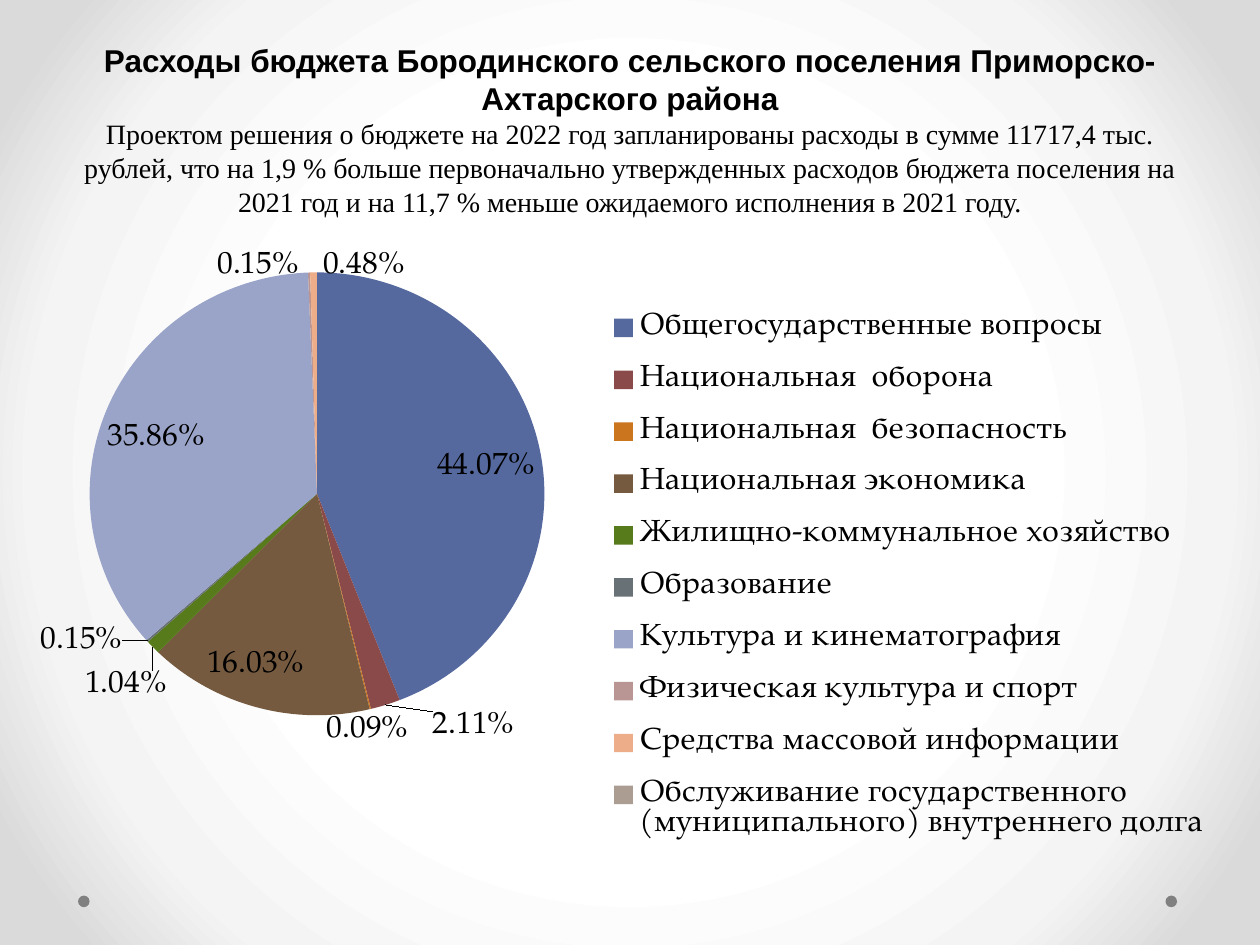
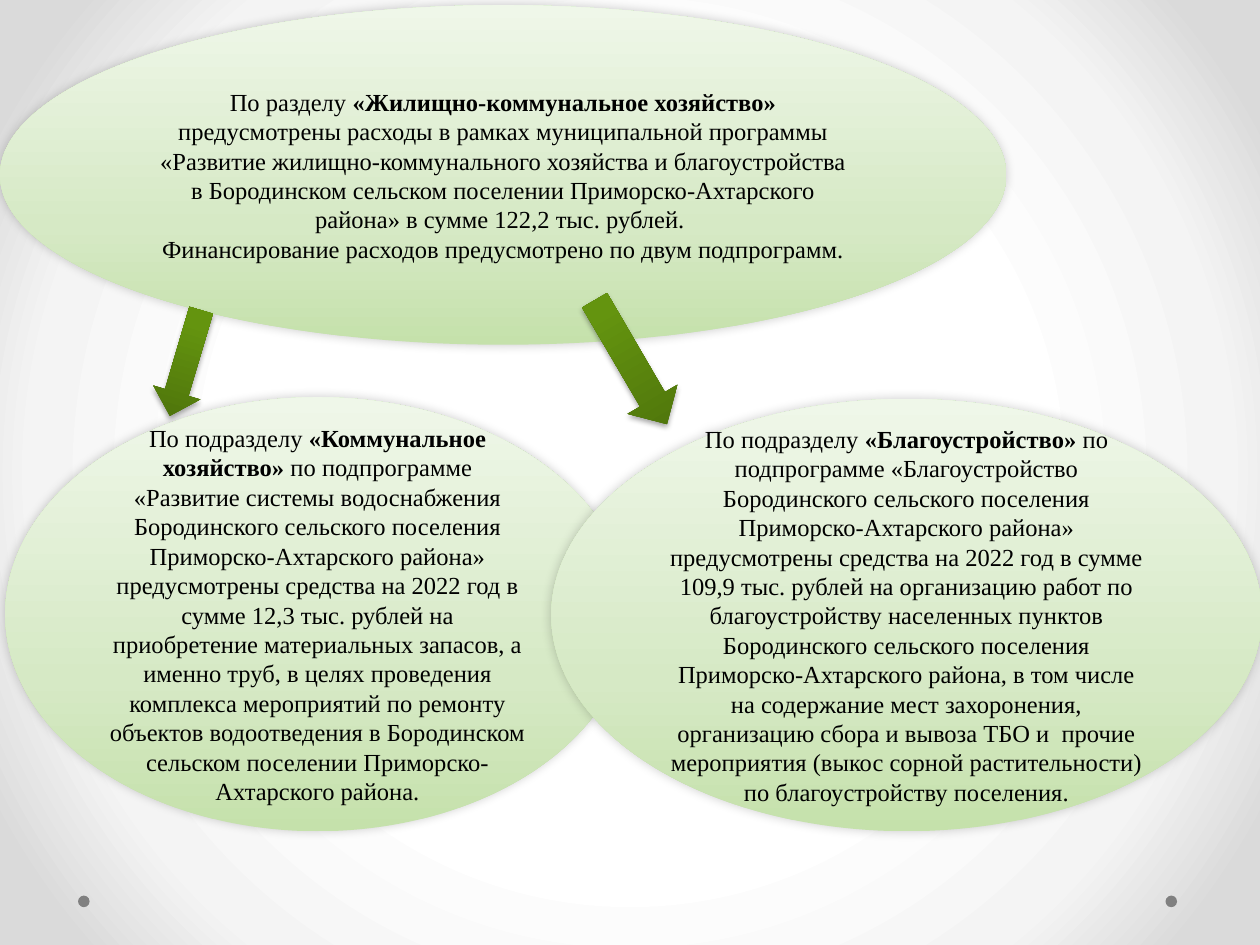
import pptx
import pptx.chart.data
import pptx.dml.color
import pptx.enum.chart
import pptx.enum.shapes
import pptx.enum.text
import pptx.oxml
import pptx.oxml.ns
import pptx.util

Pt = pptx.util.Pt
RGB = pptx.dml.color.RGBColor
SHAPE = pptx.enum.shapes.MSO_SHAPE
CENTER = pptx.enum.text.PP_ALIGN.CENTER

BLACK = RGB(0, 0, 0)
DOT_GRAY = RGB(0x80, 0x80, 0x80)
SERIF, SANS, CHART_FONT = "Times New Roman", "Arial", "TeX Gyre Pagella"

# Gradient stops: percent, colour
BACKDROP = [(50, RGB(0xFF, 0xFF, 0xFF)), (76, RGB(0xF4, 0xF4, 0xF4)), (92, RGB(0xDA, 0xDA, 0xDA))]
PALE_GREEN = [(0, RGB(0xC5, 0xE1, 0xAB)), (35, RGB(0xD6, 0xE9, 0xC5)), (100, RGB(0xEF, 0xF7, 0xE9))]
DEEP_GREEN = [(0, RGB(0x4D, 0x72, 0x0B)), (80, RGB(0x64, 0x94, 0x0F)), (100, RGB(0x65, 0x97, 0x0C))]
# Shadows: opacity percent, blur, distance, angle
SOFT_SHADOW = (20, 6, 0, 225)
ARROW_SHADOW = (35, 3.1, 1.8, 90)

HEADING = "Расходы бюджета Бородинского сельского поселения Приморско-Ахтарского района"
SUMMARY = (
    "Проектом решения о бюджете на 2022 год запланированы расходы в сумме 11717,4 тыс. рублей, "
    "что на 1,9 % больше первоначально утвержденных расходов бюджета поселения на 2021 год "
    "и на 11,7 % меньше ожидаемого исполнения в 2021 году."
)
EXPENSES = [
    ("Общегосударственные вопросы", 44.07, RGB(0x55, 0x69, 0x9F)),
    ("Национальная  оборона", 2.11, RGB(0x8A, 0x4A, 0x49)),
    ("Национальная  безопасность", 0.09, RGB(0xCC, 0x75, 0x1F)),
    ("Национальная экономика", 16.03, RGB(0x75, 0x5A, 0x3F)),
    ("Жилищно-коммунальное хозяйство", 1.04, RGB(0x57, 0x7A, 0x1B)),
    ("Образование", 0.15, RGB(0x68, 0x72, 0x76)),
    ("Культура и кинематография", 35.86, RGB(0x9A, 0xA4, 0xC9)),
    ("Физическая культура и спорт", 0.15, RGB(0xB9, 0x95, 0x94)),
    ("Средства массовой информации", 0.48, RGB(0xEE, 0xAD, 0x89)),
    ("Обслуживание государственного (муниципального) внутреннего долга", 0, RGB(0xAC, 0x9D, 0x92)),
]

# Each section: box, then paragraphs of (text, bold) runs
SECTIONS = [
    ((0, 3, 575, 194), [
        [("По разделу ", False),
         ("«Жилищно-коммунальное хозяйство» ", True),
         ("предусмотрены расходы в рамках муниципальной программы «Развитие "
          "жилищно-коммунального хозяйства и благоустройства в Бородинском сельском поселении "
          "Приморско-Ахтарского района» в сумме 122,2 тыс. рублей. ", False)],
        [("Финансирование расходов предусмотрено по двум подпрограмм.", False)],
    ]),
    ((3, 227, 357, 248), [
        [("По подразделу ", False),
         ("«Коммунальное хозяйство»", True),
         (" по подпрограмме «Развитие системы водоснабжения Бородинского сельского поселения "
          "Приморско-Ахтарского района» предусмотрены средства на 2022 год в сумме 12,3 тыс. "
          "рублей на приобретение материальных запасов, а именно труб, в целях проведения "
          "комплекса мероприятий по ремонту объектов водоотведения в Бородинском сельском "
          "поселении Приморско-Ахтарского района.", False)],
    ]),
    ((315, 228, 406, 247), [
        [("По подразделу ", False),
         ("«Благоустройство»", True),
         (" по подпрограмме «Благоустройство Бородинского сельского поселения "
          "Приморско-Ахтарского района» предусмотрены средства на 2022 год в сумме 109,9 тыс. "
          "рублей на организацию работ по благоустройству населенных пунктов Бородинского "
          "сельского поселения Приморско-Ахтарского района, в том числе на содержание мест "
          "захоронения, организацию сбора и вывоза ТБО и  прочие мероприятия (выкос сорной "
          "растительности) по благоустройству поселения.", False)],
    ]),
]
# Arrows: box, rotation
ARROWS = [((92, 176, 28, 63), 16.5), ((344, 166, 33, 82), 329.7)]


def xml(text, prefix="a"):
    """Parse one element, declaring its namespace on the root tag."""
    tag, rest = text.split(">", 1)
    closing = "/" if tag.endswith("/") else ""
    return pptx.oxml.parse_xml(f"{tag.rstrip('/')} {pptx.oxml.ns.nsdecls(prefix)}{closing}>{rest}")


def gradient(stops, direction):
    marks = "".join(
        f'<a:gs pos="{percent * 1000}"><a:srgbClr val="{color}"/></a:gs>' for percent, color in stops
    )
    return xml(f'<a:gradFill rotWithShape="1"><a:gsLst>{marks}</a:gsLst>{direction}</a:gradFill>')


def replace_fill(fill, parent, new_fill):
    fill.background()
    parent.replace(parent.find(pptx.oxml.ns.qn("a:noFill")), new_fill)


def add_plain_shape(slide, kind, box):
    shape = slide.shapes.add_shape(kind, *map(Pt, box))
    shape.shadow.inherit = False
    shape.line.fill.background()
    return shape


def add_glossy_shape(slide, kind, box, stops, shadow):
    shape = add_plain_shape(slide, kind, box)
    properties = shape.element.spPr
    replace_fill(shape.fill, properties, gradient(stops, '<a:lin ang="16200000" scaled="0"/>'))
    opacity, blur, distance, angle = shadow
    properties.find(pptx.oxml.ns.qn("a:effectLst")).append(xml(
        f'<a:outerShdw blurRad="{Pt(blur)}" dist="{Pt(distance)}" dir="{angle * 60000}" rotWithShape="0">'
        f'<a:srgbClr val="000000"><a:alpha val="{opacity * 1000}"/></a:srgbClr></a:outerShdw>'
    ))
    return shape


def add_run(paragraph, text, font, size, bold):
    run = paragraph.add_run()
    run.text = text
    run.font.name, run.font.size, run.font.bold = font, Pt(size), bold
    run.font.color.rgb = BLACK


def decorate_master(deck, slide):
    """Give the master its backdrop and two dots, drawn on slide and moved over."""
    master = deck.slide_master
    fill = master.background.fill
    fill.background()
    backdrop = master.element.cSld.find(".//" + pptx.oxml.ns.qn("p:bgPr"))
    circle = '<a:path path="circle"><a:fillToRect l="50000" t="50000" r="50000" b="50000"/></a:path>'
    replace_fill(fill, backdrop, gradient(BACKDROP, circle))
    for left in (44.6, 666):
        dot = add_plain_shape(slide, SHAPE.OVAL, (left, 511.8, 6.6, 6.6))
        dot.fill.solid()
        dot.fill.fore_color.rgb = DOT_GRAY
        master.shapes.element.append(dot.element)


def set_layout(element, index, x, y, w, h, inner=False):
    """Place a chart part by fractions of the chart."""
    for old in element.findall(pptx.oxml.ns.qn("c:layout")):
        element.remove(old)
    target = '<c:layoutTarget val="inner"/>' if inner else ""
    element.insert(index, xml(
        f'<c:layout><c:manualLayout>{target}<c:xMode val="edge"/><c:yMode val="edge"/>'
        f'<c:x val="{x}"/><c:y val="{y}"/><c:w val="{w}"/><c:h val="{h}"/>'
        "</c:manualLayout></c:layout>", "c"))


def build_expenses(slide):
    title = slide.shapes.title
    title.left, title.top, title.width, title.height = map(Pt, (36, 0, 648, 128))
    frame = title.text_frame
    frame.auto_size = pptx.enum.text.MSO_AUTO_SIZE.NONE
    frame.vertical_anchor = pptx.enum.text.MSO_ANCHOR.BOTTOM
    paragraph = frame.paragraphs[0]
    paragraph.alignment = CENTER
    add_run(paragraph, HEADING, SANS, 18, True)
    paragraph.add_line_break()
    add_run(paragraph, SUMMARY, SERIF, 16, False)

    names, shares, colors = zip(*EXPENSES)
    data = pptx.chart.data.CategoryChartData()
    data.categories = names
    data.add_series("Series 1", shares)
    chart = slide.shapes.add_chart(
        pptx.enum.chart.XL_CHART_TYPE.PIE, *map(Pt, (14.4, 134, 692, 385)), data).chart
    chart.has_title = False
    chart.font.name, chart.font.size = CHART_FONT, Pt(18)
    chart.font.color.rgb = BLACK

    chart.has_legend = True
    legend = chart.legend
    legend.position = pptx.enum.chart.XL_LEGEND_POSITION.RIGHT
    legend.include_in_layout = False
    set_layout(legend._element, 1, 0.47, 0.06, 0.52, 0.87)
    plot = chart.plots[0]
    set_layout(plot._element.getparent(), 0, 0.017, 0.031, 0.448, 0.675, inner=True)

    for index, color in enumerate(colors):
        wedge = plot.series[0].points[index].format
        wedge.fill.solid()
        wedge.fill.fore_color.rgb = color
        wedge.line.fill.background()
    labels = plot.series[0].data_labels
    labels.show_value = True
    labels.number_format, labels.number_format_is_linked = '0.00"%"', False
    labels.position = pptx.enum.chart.XL_LABEL_POSITION.BEST_FIT
    for old in labels._element.findall(pptx.oxml.ns.qn("c:showLeaderLines")):
        labels._element.remove(old)
    labels._element.append(xml('<c:showLeaderLines val="1"/>', "c"))


def build_housing(slide):
    for box, paragraphs in SECTIONS:
        section = add_glossy_shape(slide, SHAPE.OVAL, box, PALE_GREEN, SOFT_SHADOW)
        frame = section.text_frame
        frame.word_wrap = True
        frame.vertical_anchor = pptx.enum.text.MSO_ANCHOR.MIDDLE
        for index, runs in enumerate(paragraphs):
            paragraph = frame.add_paragraph() if index else frame.paragraphs[0]
            paragraph.alignment = CENTER
            for text, bold in runs:
                add_run(paragraph, text, SERIF, 14, bold)
    for box, rotation in ARROWS:
        add_glossy_shape(slide, SHAPE.DOWN_ARROW, box, DEEP_GREEN, ARROW_SHADOW).rotation = rotation


def main():
    deck = pptx.Presentation()
    deck.slide_width, deck.slide_height = Pt(720), Pt(540)
    title_only, blank = deck.slide_layouts[5], deck.slide_layouts[6]
    expenses = deck.slides.add_slide(title_only)
    decorate_master(deck, expenses)
    build_expenses(expenses)
    build_housing(deck.slides.add_slide(blank))
    deck.save("out.pptx")


if __name__ == "__main__":
    main()
